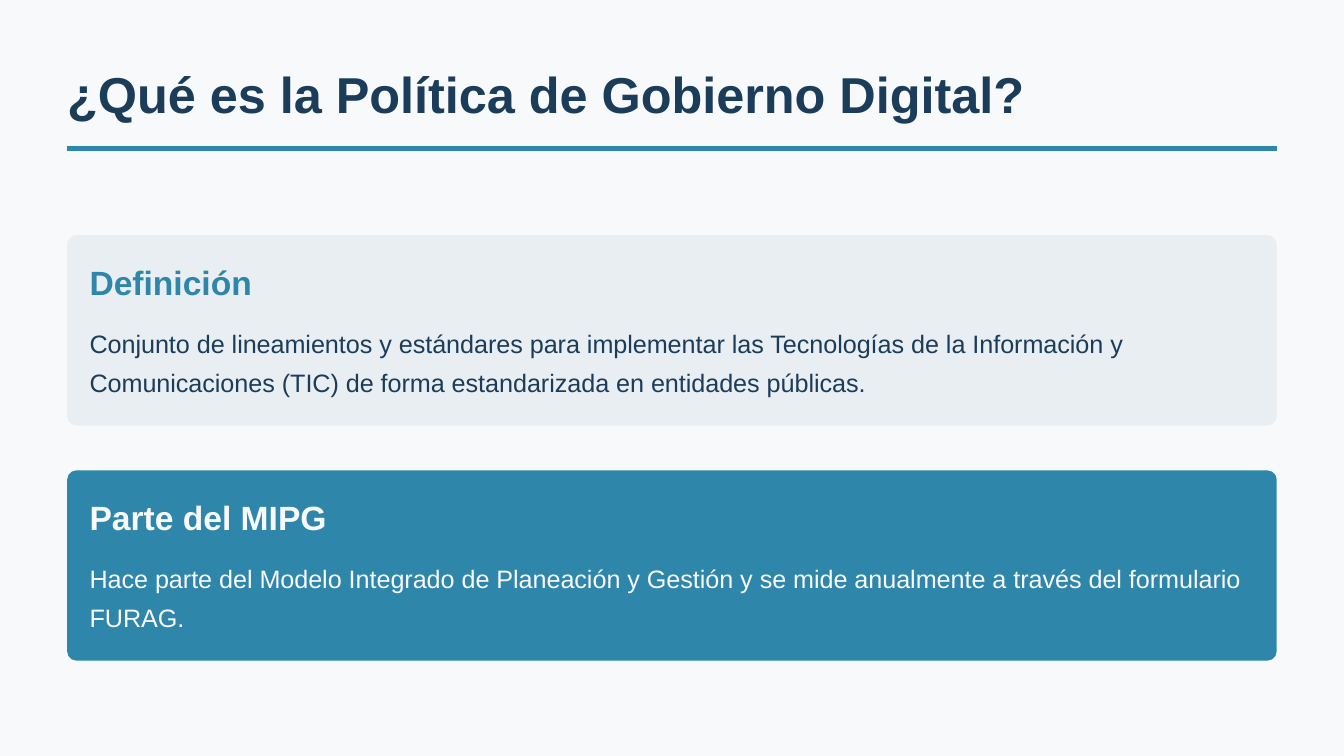
from dataclasses import dataclass

from lxml import etree
from pptx import Presentation
from pptx import util as u
from pptx.dml.color import RGBColor
from pptx.enum import shapes, text
from pptx.oxml import ns
from pptx.slide import Slide

EMU_PER_PX = 9525
FONT = "Arial"
PAPER = RGBColor(0xF8, 0xF9, 0xFA)
NAVY = RGBColor(0x1C, 0x3D, 0x5A)
BLUE = RGBColor(0x2E, 0x86, 0xAB)
MIST = RGBColor(0xE8, 0xEE, 0xF2)

SLIDE_WIDTH, SLIDE_HEIGHT = 960, 540
MARGIN = 48
CONTENT_WIDTH = SLIDE_WIDTH - 2 * MARGIN
CARD_TOP, CARD_HEIGHT, CARD_GAP = 168, 136, 32
CARD_PADDING = 16
TEXT_WIDTH = 849


@dataclass(frozen=True)
class Card:
    heading: str
    body: str
    fill: RGBColor
    heading_color: RGBColor
    body_color: RGBColor


CARDS = (
    Card(
        "Definición",
        "Conjunto de lineamientos y estándares para implementar las Tecnologías "
        "de la Información y Comunicaciones (TIC) de forma estandarizada en "
        "entidades públicas.",
        MIST, BLUE, NAVY,
    ),
    Card(
        "Parte del MIPG",
        "Hace parte del Modelo Integrado de Planeación y Gestión y se mide "
        "anualmente a través del formulario FURAG.",
        BLUE, PAPER, PAPER,
    ),
)


def px(length: int) -> u.Emu:
    return u.Emu(length * EMU_PER_PX)


def add_text(slide: Slide, content: str, left: int, top: int, width: int,
             height: int, *, size: float, color: RGBColor, leading: int,
             bold: bool = False, spacing: int = 0, bottom_inset: int = 0) -> None:
    """Sizes, leading and paragraph spacing are in points."""
    box = slide.shapes.add_textbox(px(left), px(top), px(width), px(height))
    frame = box.text_frame
    frame.word_wrap = True
    frame.vertical_anchor = text.MSO_ANCHOR.TOP
    frame.margin_left = frame.margin_top = frame.margin_right = 0
    frame.margin_bottom = px(bottom_inset)
    paragraph = frame.paragraphs[0]
    paragraph.line_spacing = u.Pt(leading)
    paragraph.space_before = paragraph.space_after = u.Pt(spacing)
    run = paragraph.add_run()
    run.text = content
    run.font.name = FONT
    run.font.size = u.Pt(size)
    run.font.bold = bold
    run.font.color.rgb = color


def add_rule(slide: Slide, top: int) -> None:
    rule = slide.shapes.add_connector(
        shapes.MSO_CONNECTOR.STRAIGHT,
        px(MARGIN), px(top), px(MARGIN + CONTENT_WIDTH), px(top))
    rule.line.color.rgb = BLUE
    rule.line.width = u.Pt(3)
    etree.SubElement(rule._element.spPr, ns.qn("a:effectLst"))


def add_card(slide: Slide, card: Card, top: int) -> None:
    panel = slide.shapes.add_shape(
        shapes.MSO_SHAPE.ROUNDED_RECTANGLE,
        px(MARGIN), px(top), px(CONTENT_WIDTH), px(CARD_HEIGHT))
    panel.adjustments[0] = 0.05
    panel.shadow.inherit = False
    panel.fill.solid()
    panel.fill.fore_color.rgb = card.fill
    panel.line.fill.background()

    left = MARGIN + CARD_PADDING
    add_text(slide, card.heading, left, top + CARD_PADDING, TEXT_WIDTH, 40,
             size=18, color=card.heading_color, leading=24, bold=True,
             bottom_inset=8)
    add_text(slide, card.body, left, top + 60, TEXT_WIDTH, 56,
             size=13.5, color=card.body_color, leading=21, spacing=3)


def main() -> None:
    presentation = Presentation()
    presentation.slide_width = px(SLIDE_WIDTH)
    presentation.slide_height = px(SLIDE_HEIGHT)
    slide = presentation.slides.add_slide(presentation.slide_layouts[6])
    slide.background.fill.solid()
    slide.background.fill.fore_color.rgb = PAPER

    add_rule(slide, 106)
    add_text(slide, "¿Qué es la Política de Gobierno Digital?", MARGIN, 48, 699, 40,
             size=27, color=NAVY, leading=30, bold=True)
    for index, card in enumerate(CARDS):
        add_card(slide, card, CARD_TOP + index * (CARD_HEIGHT + CARD_GAP))

    presentation.save("out.pptx")


if __name__ == "__main__":
    main()
